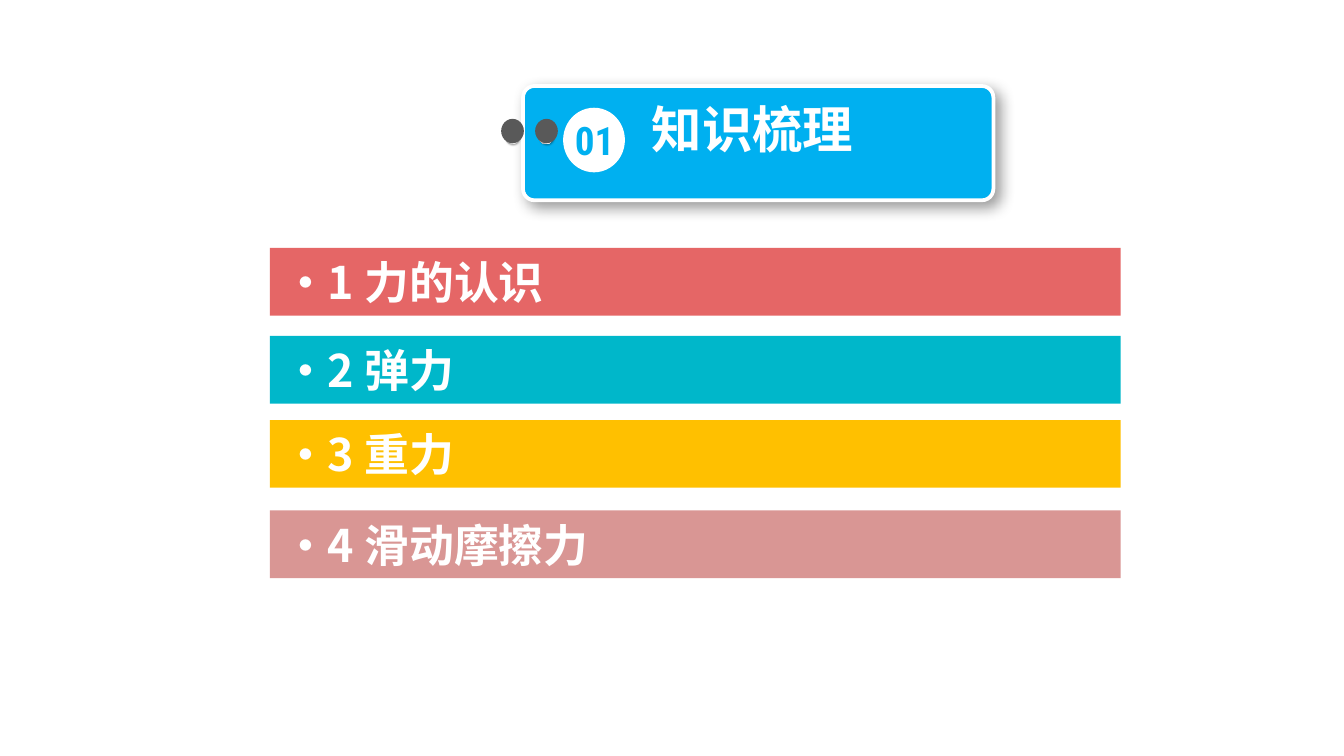
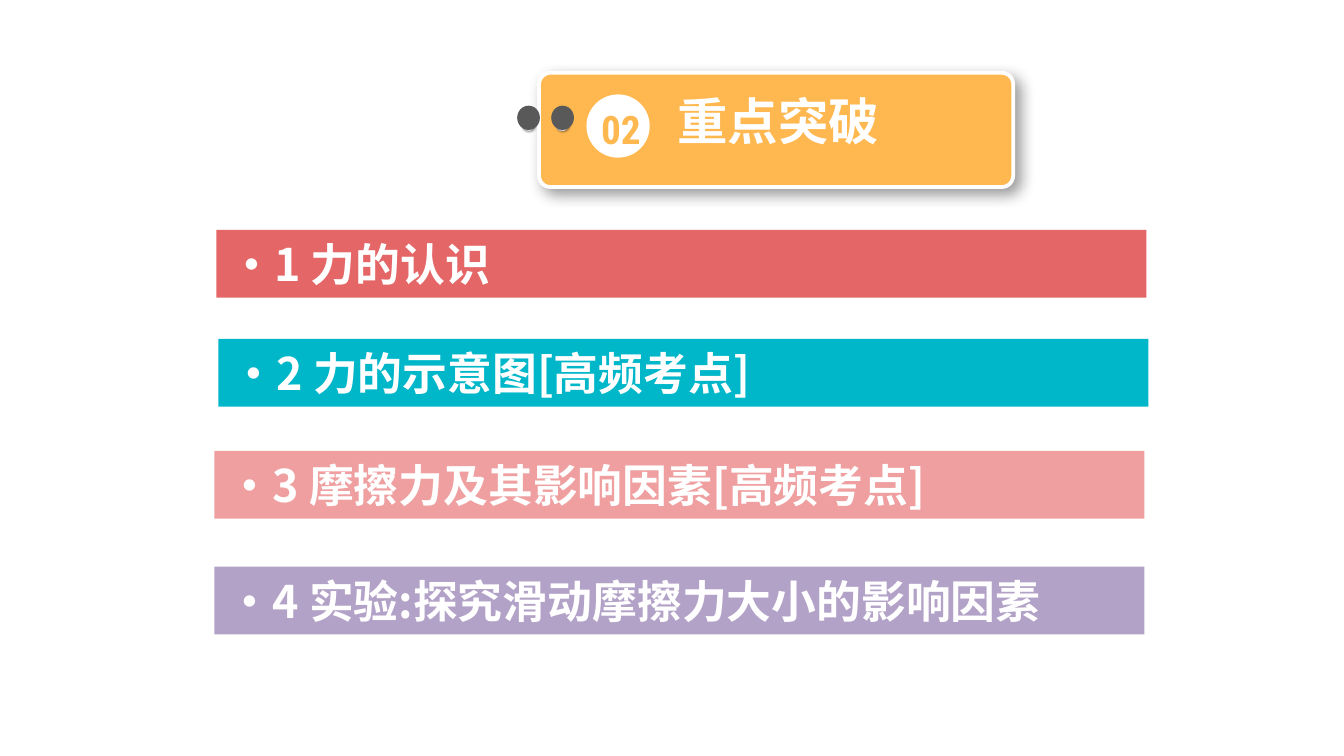
from dataclasses import dataclass

from lxml import etree
from pptx import Presentation
from pptx.dml.color import RGBColor
from pptx.enum.lang import MSO_LANGUAGE_ID
from pptx.enum.shapes import MSO_SHAPE
from pptx.enum.text import MSO_ANCHOR, MSO_AUTO_SIZE, PP_ALIGN
from pptx.oxml import parse_xml
from pptx.oxml.ns import qn
from pptx.util import Pt

RECT, ROUND, OVAL = MSO_SHAPE.RECTANGLE, MSO_SHAPE.ROUNDED_RECTANGLE, MSO_SHAPE.OVAL
TOP, MIDDLE = MSO_ANCHOR.TOP, MSO_ANCHOR.MIDDLE
LEFT, CENTER = PP_ALIGN.LEFT, PP_ALIGN.CENTER
NO_FIT = MSO_AUTO_SIZE.NONE
CHINESE = MSO_LANGUAGE_ID.SIMPLIFIED_CHINESE
NS = "http://schemas.openxmlformats.org/drawingml/2006/main"

COLORS = {
    "white": "FFFFFF", "black": "000000", "pin": "595959",
    "silver": "A6A6A6", "pale": "F2F2F2",
    "blue": "00B0F0", "orange": "FFB850",
    "red": "E56666", "teal": "00B7CA", "yellow": "FFC000",
    "rose": "D99694", "pink": "EF9F9F", "purple": "B3A2C7",
}
CJK_FONT = "Noto Sans CJK SC"
NUMBER_FONT = "Roboto Condensed"
BAR_HEIGHT = 36.3
PIN_OFFSETS = (6.5, -11.7)
METAL = ((0, "white"), (17, "silver"), (35, "pale"),
         (55, "silver"), (75, "pale"), (100, "silver"))


@dataclass
class Box:
    """A rectangle in points."""
    left: float
    top: float
    width: float
    height: float

    def lengths(self) -> tuple:
        """Return left, top, width and height as lengths."""
        return Pt(self.left), Pt(self.top), Pt(self.width), Pt(self.height)


@dataclass
class Bar:
    """One topic bar."""
    text: str
    color: str
    left: float
    top: float


@dataclass
class Section:
    """One section slide: a pinned banner above topic bars."""
    number: str
    title: str
    color: str
    banner: Box
    disc: Box
    number_box: Box
    title_box: Box
    bar_width: float
    bars: list[Bar]


SECTIONS = [
    Section("01", "知识梳理", "blue",
            Box(280.2, 46.1, 252, 61.2), Box(301.7, 57.7, 33.1, 34.6),
            Box(299.5, 58.5, 38.2, 32.4), Box(323.3, 52.6, 159.8, 40.3), 455.8,
            [Bar("·1 力的认识", "red", 144.6, 132.8),
             Bar("·2 弹力", "teal", 144.6, 180),
             Bar("·3 重力", "yellow", 144.6, 225),
             Bar("·4 滑动摩擦力", "rose", 144.6, 273.5)]),
    Section("02", "重点突破", "orange",
            Box(288.8, 39, 254, 61.2), Box(314.2, 50.6, 33.9, 33.9),
            Box(312.5, 52.6, 40.3, 32.4), Box(327.6, 48.2, 178.6, 40.3), 498.2,
            [Bar("·1 力的认识", "red", 115.9, 123.2),
             Bar("·2 力的示意图[高频考点]", "teal", 117, 181.6),
             Bar("·3 摩擦力及其影响因素[高频考点]", "pink", 114.9, 241.5),
             Bar("·4 实验:探究滑动摩擦力大小的影响因素", "purple", 114.9, 303.6)]),
]


def rgb(name: str) -> RGBColor:
    """Look up a named colour."""
    return RGBColor.from_string(COLORS[name])


def add_block(s, kind, box: Box, color: str):
    """Add a plain filled shape without line or shadow."""
    sp = s.shapes.add_shape(kind, *box.lengths())
    sp.shadow.inherit = False
    sp.fill.solid()
    sp.fill.fore_color.rgb = rgb(color)
    sp.line.fill.background()
    return sp


def cast_shadow(sp, blur: float, distance: float) -> None:
    """Give a shape a soft shadow towards the lower right."""
    effects = sp.element.spPr.find(qn("a:effectLst"))
    effects.append(parse_xml(
        f'<a:outerShdw xmlns:a="{NS}" blurRad="{Pt(blur)}" dist="{Pt(distance)}" '
        f'dir="2700000" algn="tl" rotWithShape="0"><a:srgbClr val="{COLORS["black"]}">'
        '<a:alpha val="40000"/></a:srgbClr></a:outerShdw>'))


def fill_metal(sp) -> None:
    """Fill a shape with the banded metal gradient."""
    sp.fill.gradient()
    sp.fill.gradient_angle = 315
    stops = sp.element.spPr.find(qn("a:gradFill")).find(qn("a:gsLst"))
    for stop in list(stops):
        stops.remove(stop)
    for position, color in METAL:
        stop = etree.SubElement(stops, qn("a:gs"), pos=str(position * 1000))
        etree.SubElement(stop, qn("a:srgbClr"), val=COLORS[color])


def write(sp, text: str, size: float, color: str, font: str = CJK_FONT,
          align=CENTER, anchor=MIDDLE, side: float = 0) -> None:
    """Write one bold line into a shape."""
    tf = sp.text_frame
    tf.word_wrap = True
    tf.auto_size = NO_FIT
    tf.vertical_anchor = anchor
    tf.margin_left = tf.margin_right = Pt(side)
    tf.margin_top = tf.margin_bottom = Pt(0)
    p = tf.paragraphs[0]
    p.alignment = align
    r = p.add_run()
    r.text = text
    r.font.size = Pt(size)
    r.font.bold = True
    r.font.color.rgb = rgb(color)
    r.font.name = font
    r.font.language_id = CHINESE
    latin = r.font._element.find(qn("a:latin"))
    latin.addnext(latin.makeelement(qn("a:ea"), {"typeface": font}))


def add_banner(s, section: Section) -> None:
    """Draw the pinned banner with its number and title."""
    box = section.banner
    sp = add_block(s, ROUND, box, section.color)
    sp.adjustments[0] = 0.1
    sp.line.color.rgb = rgb("white")
    sp.line.width = Pt(2)
    cast_shadow(sp, 8, 4)

    for offset in PIN_OFFSETS:
        left = box.left + offset
        hole = add_block(s, OVAL, Box(left + 2.2, box.top + 23.8, 7.2, 7.2), "silver")
        hole.rotation = 270
        fill_metal(hole)
        cast_shadow(hole, 1, 1)
        add_block(s, OVAL, Box(left, box.top + 17.6, 12.2, 13), "pin")

    add_block(s, OVAL, section.disc, "white")
    label = s.shapes.add_textbox(*section.number_box.lengths())
    write(label, section.number, 21, section.color, NUMBER_FONT)

    title = s.shapes.title
    title.left, title.top, title.width, title.height = section.title_box.lengths()
    write(title, section.title, 27, "white", anchor=TOP)
    title.element.getparent().append(title.element)


def add_section(prs, section: Section) -> None:
    """Add one section slide."""
    s = prs.slides.add_slide(prs.slide_layouts[5])
    s.background.fill.solid()
    s.background.fill.fore_color.rgb = rgb("white")
    add_banner(s, section)
    for bar in section.bars:
        box = Box(bar.left, bar.top, section.bar_width, BAR_HEIGHT)
        sp = add_block(s, RECT, box, bar.color)
        write(sp, bar.text, 24, "white", align=LEFT, side=7.2)


def main() -> None:
    """Build and save the presentation."""
    prs = Presentation()
    prs.slide_width, prs.slide_height = Pt(720), Pt(405)
    for section in SECTIONS:
        add_section(prs, section)
    prs.save("out.pptx")


if __name__ == "__main__":
    main()
